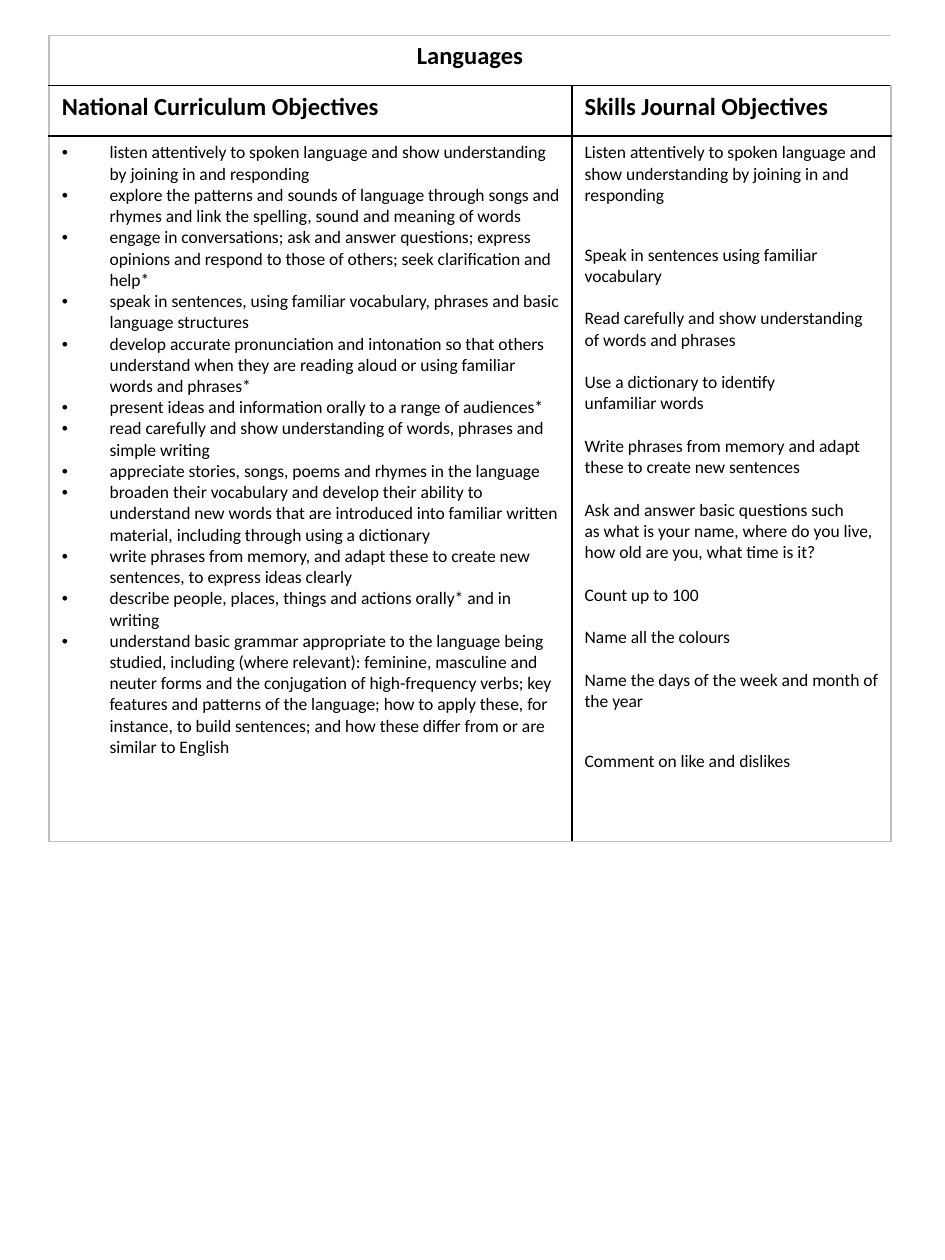
from lxml import etree
from pptx import Presentation
from pptx.dml.color import RGBColor
from pptx.enum.text import PP_ALIGN
from pptx.oxml.ns import qn
from pptx.util import Inches, Pt

CENTER, LEFT = PP_ALIGN.CENTER, PP_ALIGN.LEFT
BLACK = RGBColor(0x00, 0x00, 0x00)
GREY = RGBColor(0xBF, 0xBF, 0xBF)
FONT = "Calibri"
HEADING_SIZE, BODY_SIZE = 14, 10
LINE_GAP, WIDE_GAP = 12.2, 22
BULLET_INDENT = Inches(0.38)
COLUMN_WIDTHS = [4.15, 2.53]
ROW_HEIGHTS = [0.4, 0.4, 5.6]

CURRICULUM_OBJECTIVES = [
    "listen attentively to spoken language and show understanding by joining in and responding",
    "explore the patterns and sounds of language through songs and rhymes and link the spelling, "
    "sound and meaning of words",
    "engage in conversations; ask and answer questions; express opinions and respond to those of "
    "others; seek clarification and help*",
    "speak in sentences, using familiar vocabulary, phrases and basic language structures",
    "develop accurate pronunciation and intonation so that others understand when they are reading "
    "aloud or using familiar words and phrases*",
    "present ideas and information orally to a range of audiences*",
    "read carefully and show understanding of words, phrases and simple writing",
    "appreciate stories, songs, poems and rhymes in the language",
    "broaden their vocabulary and develop their ability to understand new words that are introduced "
    "into familiar written material, including through using a dictionary",
    "write phrases from memory, and adapt these to create new sentences, to express ideas clearly",
    "describe people, places, things and actions orally* and in writing",
    "understand basic grammar appropriate to the language being studied, including (where relevant): "
    "feminine, masculine and neuter forms and the conjugation of high-frequency verbs; key features "
    "and patterns of the language; how to apply these, for instance, to build sentences; and how "
    "these differ from or are similar to English",
]

# Each objective with the space above it, in points
JOURNAL_OBJECTIVES = [
    ("Listen attentively to spoken language and show understanding by joining in and responding", 0),
    ("Speak in sentences using familiar vocabulary", WIDE_GAP),
    ("Read carefully and show understanding of words and phrases", LINE_GAP),
    ("Use a dictionary to identify\nunfamiliar words", LINE_GAP),
    ("Write phrases from memory and adapt these to create new sentences", LINE_GAP),
    ("Ask and answer basic questions such\nas what is your name, where do you live, "
     "how old are you, what time is it?", LINE_GAP),
    ("Count up to 100", LINE_GAP),
    ("Name all the colours", LINE_GAP),
    ("Name the days of the week and month of the year", LINE_GAP),
    ("Comment on like and dislikes", WIDE_GAP),
]


def write_paragraph(cell, text, size, bold=False, alignment=LEFT, space_before=0):
    """Fill the cell's empty first paragraph or append one; a newline becomes a line break."""
    paragraph = cell.text_frame.paragraphs[0]
    if paragraph.runs:
        paragraph = cell.text_frame.add_paragraph()
    paragraph.alignment = alignment
    paragraph.space_before = Pt(space_before)
    for index, line in enumerate(text.split("\n")):
        if index:
            paragraph.add_line_break()
        run = paragraph.add_run()
        run.text = line
        run.font.name = FONT
        run.font.size = Pt(size)
        run.font.bold = bold
        run.font.color.rgb = BLACK
    return paragraph


def add_border(cell, side, color):
    line = etree.SubElement(cell._tc.get_or_add_tcPr(), qn(f"a:ln{side}"), w=str(Pt(1)))
    fill = etree.SubElement(line, qn("a:solidFill"))
    etree.SubElement(fill, qn("a:srgbClr"), val=str(color))


presentation = Presentation()
presentation.slide_width = Inches(7.5)
presentation.slide_height = Inches(10)
slide = presentation.slides.add_slide(presentation.slide_layouts[6])

row_count, column_count = len(ROW_HEIGHTS), len(COLUMN_WIDTHS)
table = slide.shapes.add_table(
    row_count, column_count, Inches(0.39), Inches(0.28),
    Inches(sum(COLUMN_WIDTHS)), Inches(sum(ROW_HEIGHTS)),
).table
table.first_row = False
table.horz_banding = False
for column, width in zip(table.columns, COLUMN_WIDTHS):
    column.width = Inches(width)
for row, height in zip(table.rows, ROW_HEIGHTS):
    row.height = Inches(height)
table.cell(0, 0).merge(table.cell(0, 1))

# Grey frame around the table, black rules inside it
for row in range(row_count):
    for column in range(column_count):
        cell = table.cell(row, column)
        on_frame = {
            "L": column == 0,
            "R": column == column_count - 1,
            "T": row == 0,
            "B": row == row_count - 1,
        }
        for side, outer in on_frame.items():
            if row > 0 or outer or side == "B":
                add_border(cell, side, GREY if outer else BLACK)
        cell.fill.background()

write_paragraph(table.cell(0, 0), "Languages", HEADING_SIZE, True, CENTER)
for column, heading in enumerate(["National Curriculum Objectives", "Skills Journal Objectives"]):
    write_paragraph(table.cell(1, column), heading, HEADING_SIZE, True)

for objective in CURRICULUM_OBJECTIVES:
    paragraph = write_paragraph(table.cell(2, 0), objective, BODY_SIZE)
    properties = paragraph._p.get_or_add_pPr()
    properties.set("marL", str(BULLET_INDENT))
    properties.set("indent", str(-BULLET_INDENT))
    etree.SubElement(properties, qn("a:buFont"), typeface="Arial")
    etree.SubElement(properties, qn("a:buChar"), char="•")

for objective, gap in JOURNAL_OBJECTIVES:
    write_paragraph(table.cell(2, 1), objective, BODY_SIZE, space_before=gap)

presentation.save("out.pptx")
